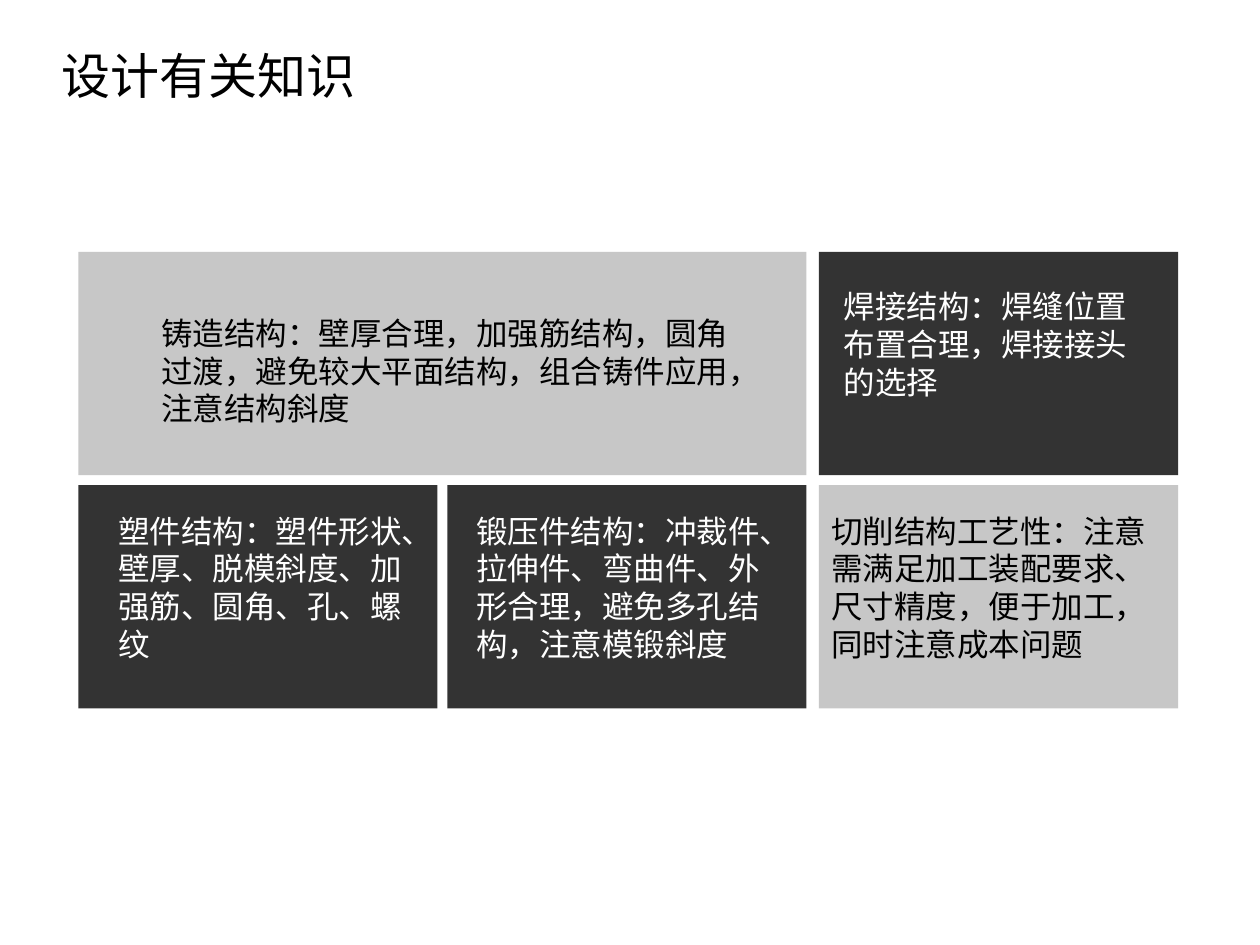
import dataclasses
import typing

import lxml.etree
import pptx
import pptx.dml.color
import pptx.enum.shapes
import pptx.enum.text
import pptx.oxml.ns
import pptx.util

Cm = pptx.util.Cm
Pt = pptx.util.Pt
RGB = pptx.dml.color.RGBColor


@dataclasses.dataclass(frozen=True)
class Theme:
    font: str = "Noto Sans CJK SC"
    dark: RGB = RGB(0x33, 0x33, 0x33)
    light: RGB = RGB(0xC7, 0xC7, 0xC7)
    black: RGB = RGB(0, 0, 0)
    white: RGB = RGB(0xFF, 0xFF, 0xFF)
    head: int = 28
    body: int = 18
    lead: float = 1.2  # line pitch as a share of the type size


@dataclasses.dataclass(frozen=True)
class Tile:
    col: int
    row: int
    span: int
    dark: bool
    text: str
    left: float  # text box, in cm
    top: float
    width: float
    height: float


THEME = Theme()

# Tile grid, in cm
COLS = (1.58, 9.02, 16.51)
ROWS = (5.08, 9.78)
WIDE, HIGH = 7.24, 4.5

TILES = (
    Tile(0, 0, 2, False, "铸造结构：壁厚合理，加强筋结构，圆角过渡，避免较大平面结构，组合铸件应用，注意结构斜度",
         3, 6.2, 12.07, 2.57),
    Tile(2, 0, 1, True, "焊接结构：焊缝位置布置合理，焊接接头的选择",
         16.76, 5.66, 6.53, 2.57),
    Tile(0, 1, 1, True, "塑件结构：塑件形状、壁厚、脱模斜度、加强筋、圆角、孔、螺纹",
         2.13, 10.19, 6.38, 3.33),
    Tile(1, 1, 1, True, "锻压件结构：冲裁件、拉伸件、弯曲件、外形合理，避免多孔结构，注意模锻斜度",
         9.35, 10.19, 6.68, 3.33),
    Tile(2, 1, 1, False, "切削结构工艺性：注意需满足加工装配要求、尺寸精度，便于加工，同时注意成本问题",
         16.51, 10.19, 7.24, 3.33),
)


def apply(item: typing.Any, form: dict[str, typing.Any]) -> None:
    for key, value in form.items():
        setattr(item, key, value)


def write(shape: typing.Any, text: str, size: int, color: RGB, wrap: bool) -> None:
    """Fill a text shape with one left-aligned paragraph."""
    frame = shape.text_frame
    apply(frame, {
        "word_wrap": wrap,
        "auto_size": pptx.enum.text.MSO_AUTO_SIZE.NONE,
        "vertical_anchor": pptx.enum.text.MSO_ANCHOR.TOP,
    })
    para = frame.paragraphs[0]
    apply(para, {
        "alignment": pptx.enum.text.PP_ALIGN.LEFT,
        "line_spacing": Pt(size * THEME.lead),
    })
    run = para.add_run()
    run.text = text
    run.font.color.rgb = color
    apply(run.font, {"size": Pt(size), "name": THEME.font})
    # East Asian typeface
    east = lxml.etree.SubElement(run.font._element, pptx.oxml.ns.qn("a:ea"))
    east.set("typeface", THEME.font)


def block(shapes: typing.Any, tile: Tile) -> None:
    """Draw the coloured rectangle of a tile."""
    left = COLS[tile.col]
    width = COLS[tile.col + tile.span - 1] + WIDE - left
    rect = shapes.add_shape(
        pptx.enum.shapes.MSO_SHAPE.RECTANGLE,
        Cm(left), Cm(ROWS[tile.row]), Cm(width), Cm(HIGH))
    rect.shadow.inherit = False
    rect.fill.solid()
    rect.fill.fore_color.rgb = THEME.dark if tile.dark else THEME.light
    rect.line.fill.background()


def label(shapes: typing.Any, tile: Tile) -> None:
    """Draw the text of a tile."""
    box = shapes.add_textbox(
        Cm(tile.left), Cm(tile.top), Cm(tile.width), Cm(tile.height))
    color = THEME.white if tile.dark else THEME.black
    write(box, tile.text, THEME.body, color, True)


def main() -> None:
    deck = pptx.Presentation()
    apply(deck, {"slide_width": Cm(25.4), "slide_height": Cm(19.05)})
    slide = deck.slides.add_slide(deck.slide_layouts[5])

    # Title
    title = slide.shapes.title
    apply(title, {"left": Cm(0.99), "top": Cm(0.79),
                  "width": Cm(6.5), "height": Cm(1.45)})
    write(title, "设计有关知识", THEME.head, THEME.black, False)

    # Tiles, then their texts on top
    group = slide.shapes.add_group_shape()
    for tile in TILES:
        block(group.shapes, tile)
    for tile in TILES:
        label(slide.shapes, tile)

    deck.save("out.pptx")


if __name__ == "__main__":
    main()
